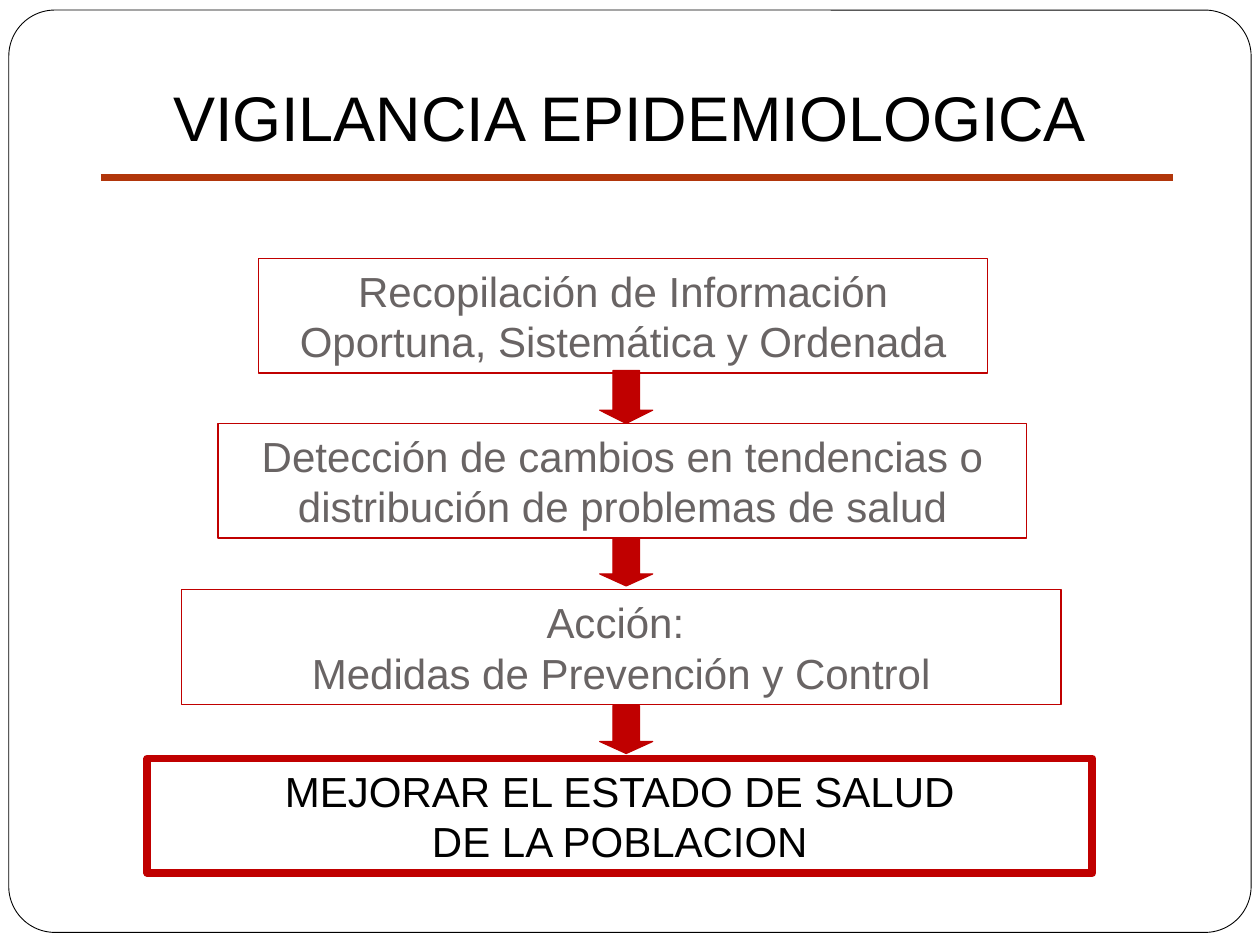
from pptx import Presentation
from pptx.dml.color import RGBColor
from pptx.enum import shapes, text
from pptx.oxml.ns import qn
from pptx.util import Inches, Pt
from lxml import etree

COLORS = {"red": "C00000", "rust": "B1360B", "gray": "696464", "black": "000000"}
TITLE = "VIGILANCIA EPIDEMIOLOGICA"
STEPS = [
    (2.05, 2.05, 5.79, 0.75, "gray",
     ["Recopilación de Información", "Oportuna, Sistemática y Ordenada"]),
    (1.73, 3.36, 6.42, 0.75, "gray",
     ["Detección de cambios en tendencias o distribución de problemas de salud"]),
    (1.44, 4.68, 6.98, 0.75, "gray",
     ["Acción: ", "Medidas de Prevención y Control"]),
    (1.17, 6.02, 7.5, 4.5, "black",
     ["MEJORAR EL ESTADO DE SALUD", "DE LA POBLACION"]),
]
ARROWS = [(2.94, 0.42), (4.27, 0.38), (5.6, 0.38)]
STEP_H = 0.91


def rgb(name):
    return RGBColor.from_string(COLORS[name])


def add_box(slide, kind, place, color, width, fill=None):
    box = slide.shapes.add_shape(kind, *map(Inches, place))
    box.shadow.inherit = False
    if fill:
        box.fill.solid()
        box.fill.fore_color.rgb = rgb(fill)
    else:
        box.fill.background()
    box.line.color.rgb = rgb(color)
    box.line.width = Pt(width)
    return box


def write(frame, lines, size, color):
    frame.word_wrap = True
    frame.vertical_anchor = text.MSO_ANCHOR.MIDDLE
    for i, line in enumerate(lines):
        para = frame.add_paragraph() if i else frame.paragraphs[0]
        para.alignment = text.PP_ALIGN.CENTER
        run = para.add_run()
        run.text = line
        run.font.name = "Arial"
        run.font.size = Pt(size)
        run.font.color.rgb = rgb(color)


def main():
    deck = Presentation()
    deck.slide_width, deck.slide_height = Inches(10), Inches(7.5)
    slide = deck.slides.add_slide(deck.slide_layouts[5])

    border = add_box(slide, shapes.MSO_SHAPE.ROUNDED_RECTANGLE,
                     (0.07, 0.08, 9.86, 7.32), "black", 0.5)
    border.adjustments[0] = 0.05

    title = slide.shapes.title
    title.left, title.top = Inches(0.75), Inches(0.44)
    title.width, title.height = Inches(8.5), Inches(0.97)
    write(title.text_frame, [TITLE], 36, "black")

    rule = slide.shapes.add_connector(
        shapes.MSO_CONNECTOR.STRAIGHT, *map(Inches, (0.8, 1.41, 9.31, 1.41)))
    rule.line.color.rgb = rgb("rust")
    rule.line.width = Pt(4)
    etree.SubElement(rule._element.spPr, qn("a:effectLst"))

    for left, top, wide, line, color, lines in STEPS:
        box = add_box(slide, shapes.MSO_SHAPE.RECTANGLE,
                      (left, top, wide, STEP_H), "red", line)
        write(box.text_frame, lines, 24, color)

    for top, high in ARROWS:
        arrow = add_box(slide, shapes.MSO_SHAPE.DOWN_ARROW,
                        (4.76, top, 0.42, high), "red", 0.75, "red")
        arrow.adjustments[0] = 0.5
        arrow.adjustments[1] = 0.25

    deck.save("out.pptx")


if __name__ == "__main__":
    main()
